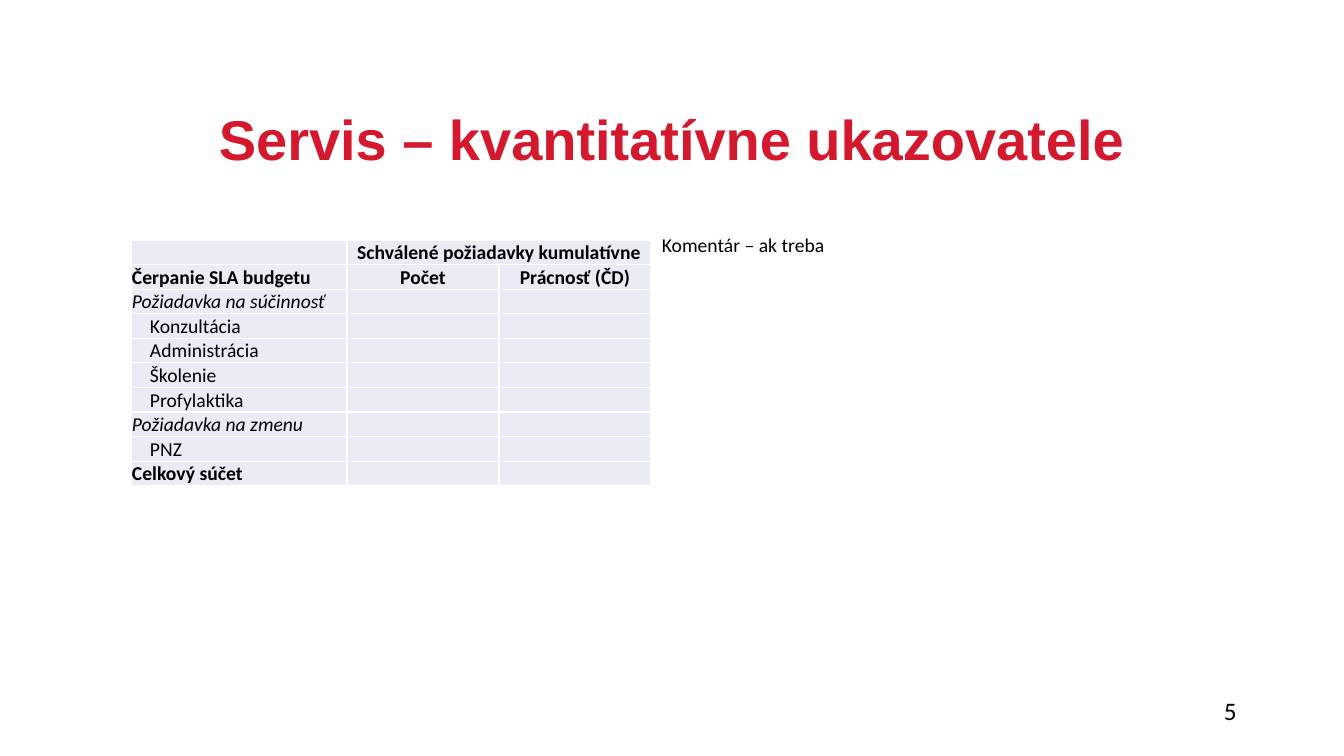
from lxml import etree
from pptx import Presentation
from pptx import util as u
from pptx.dml.color import RGBColor
from pptx.enum import text
from pptx.oxml.ns import qn

COLORS = {"title": "D4182E", "ink": "000000", "cell": "E9EBF5", "border": "FFFFFF"}

TEXTS = [
    ("Servis – kvantitatívne ukazovatele", (209, 52, 1002, 126), "Arial", 40, "title", True, text.MSO_ANCHOR.BOTTOM, 0.9),
    ("Komentár – ak treba", (652, 231, 516, 440), "Calibri", 14, "ink", False, text.MSO_ANCHOR.TOP, 0.9),
    ("5", (1214, 690, 104, 40), "Calibri", 18, "ink", False, text.MSO_ANCHOR.TOP, 1.0),
]

ROWS = [
    ("bold", ["", "Schválené požiadavky kumulatívne", ""]),
    ("bold", ["Čerpanie SLA budgetu", "Počet", "Prácnosť (ČD)"]),
    ("italic", ["Požiadavka na súčinnosť", "", ""]),
    ("item", ["Konzultácia", "", ""]),
    ("item", ["Administrácia", "", ""]),
    ("item", ["Školenie", "", ""]),
    ("item", ["Profylaktika", "", ""]),
    ("italic", ["Požiadavka na zmenu", "", ""]),
    ("item", ["PNZ", "", ""]),
    ("bold", ["Celkový súčet", "", ""]),
]
COLUMNS = [216, 152, 152]
TABLE_LEFT, TABLE_TOP, ROW_HEIGHT = 131, 240, 21
INSET, ITEM_INSET = 1, 19
TABLE_SIZE = 14


def px(n):
    return u.Emu(round(n * 914400 / 100.8))


def color(name):
    return RGBColor.from_string(COLORS[name])


def style(font, name, size, ink, bold=False, italic=False):
    font.name, font.size = name, u.Pt(size)
    font.bold, font.italic = bold, italic
    font.color.rgb = color(ink)


def add_text(s, words, box, name, size, ink, bold, anchor, spacing):
    tf = s.shapes.add_textbox(*map(px, box)).text_frame
    tf.word_wrap = True
    tf.vertical_anchor = anchor
    tf.text = words
    p = tf.paragraphs[0]
    p.line_spacing = spacing
    style(p.runs[0].font, name, size, ink, bold)


def add_borders(cell):
    tcPr = cell._tc.get_or_add_tcPr()
    for side in ("lnL", "lnR", "lnT", "lnB"):
        ln = etree.SubElement(tcPr, qn("a:" + side), w=str(u.Pt(1)))
        fill = etree.SubElement(ln, qn("a:solidFill"))
        etree.SubElement(fill, qn("a:srgbClr"), val=COLORS["border"])


def fill_cell(cell, words, kind, column):
    add_borders(cell)
    cell.fill.solid()
    cell.fill.fore_color.rgb = color("cell")
    cell.vertical_anchor = text.MSO_ANCHOR.BOTTOM
    cell.margin_left = px(ITEM_INSET if kind == "item" and column == 0 else INSET)
    cell.margin_right = cell.margin_top = px(INSET)
    cell.margin_bottom = 0
    p = cell.text_frame.paragraphs[0]
    if words:
        p.text = words
        p.alignment = text.PP_ALIGN.CENTER if column else text.PP_ALIGN.LEFT
        style(p.runs[0].font, "Calibri", TABLE_SIZE, "ink", kind == "bold", kind == "italic")
    else:
        end = etree.SubElement(p._p, qn("a:endParaRPr"), sz=str(TABLE_SIZE * 100))
        etree.SubElement(end, qn("a:latin"), typeface="Calibri")


def add_budget_table(s):
    frame = s.shapes.add_table(len(ROWS), len(COLUMNS), px(TABLE_LEFT), px(TABLE_TOP),
                               px(sum(COLUMNS)), px(ROW_HEIGHT * len(ROWS)))
    table = frame.table
    table.first_row = table.horz_banding = False
    for column, width in zip(table.columns, COLUMNS):
        column.width = px(width)
    for i, (kind, cells) in enumerate(ROWS):
        table.rows[i].height = px(ROW_HEIGHT)
        for j, words in enumerate(cells):
            fill_cell(table.cell(i, j), words, kind, j)
    table.cell(0, 1).merge(table.cell(0, 2))


def main():
    prs = Presentation()
    prs.slide_width, prs.slide_height = px(1344), px(756)
    s = prs.slides.add_slide(prs.slide_layouts[6])
    for item in TEXTS:
        add_text(s, *item)
    add_budget_table(s)
    prs.save("out.pptx")


if __name__ == "__main__":
    main()
